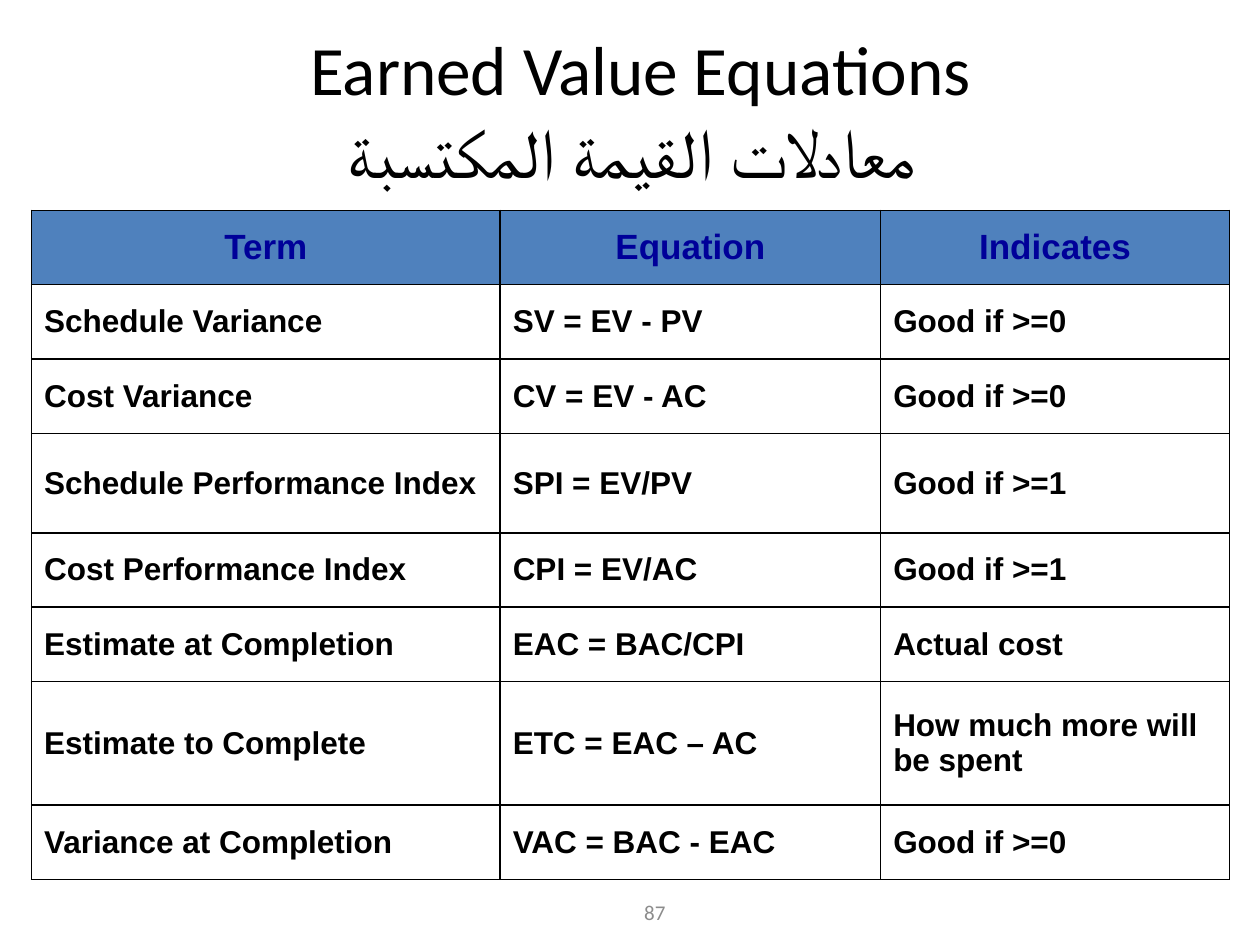
from dataclasses import dataclass

from lxml.etree import SubElement
from pptx import Presentation
from pptx.dml.color import RGBColor
from pptx.enum.text import MSO_ANCHOR, PP_ALIGN
from pptx.oxml.ns import qn
from pptx.util import Inches, Pt


@dataclass(frozen=True)
class Theme:
    ink: str = "000000"
    header_ink: str = "000099"
    header_fill: str = "4F81BD"
    muted: str = "8C8C8C"
    heading_font: str = "Calibri"
    table_font: str = "Arial"
    title_size: float = 39.6
    header_size: int = 20
    body_size: int = 18
    number_size: int = 12
    border_width: int = 1


THEME = Theme()
TITLE_LINES = ["Earned Value Equations", "معادلات القيمة المكتسبة "]
COLUMN_WIDTHS = [3.72, 3.02, 2.77]
ROW_HEIGHTS = [0.59, 0.59, 0.59, 0.79, 0.59, 0.59, 0.98, 0.59]
HEADINGS = ["Term", "Equation", "Indicates"]
EQUATIONS = [
    ["Schedule Variance", "SV = EV - PV", "Good if >=0"],
    ["Cost Variance", "CV = EV - AC", "Good if >=0"],
    ["Schedule Performance Index", "SPI = EV/PV", "Good if >=1"],
    ["Cost Performance Index", "CPI = EV/AC", "Good if >=1"],
    ["Estimate at Completion", "EAC = BAC/CPI", "Actual cost"],
    ["Estimate to Complete", "ETC = EAC – AC", ["How much more will", "be spent"]],
    ["Variance at Completion", "VAC = BAC - EAC", "Good if >=0"],
]


def add_span(para, text, color, **font_values):
    span = para.add_run()
    span.text = text
    for name, value in font_values.items():
        setattr(span.font, name, value)
    span.font.color.rgb = RGBColor.from_string(color)


def add_text_frame(page, box):
    frame = page.shapes.add_textbox(*map(Inches, box)).text_frame
    for name, value in {"word_wrap": True, "vertical_anchor": MSO_ANCHOR.MIDDLE}.items():
        setattr(frame, name, value)
    return frame


def add_title(page, box):
    para = add_text_frame(page, box).paragraphs[0]
    para.alignment = PP_ALIGN.CENTER
    for index, line in enumerate(TITLE_LINES):
        if index:
            para.add_line_break()
        add_span(para, line, THEME.ink, name=THEME.heading_font, size=Pt(THEME.title_size))


def add_page_number(page, box, number):
    para = add_text_frame(page, box).paragraphs[0]
    para.alignment = PP_ALIGN.RIGHT
    add_span(para, number, THEME.muted, name=THEME.heading_font, size=Pt(THEME.number_size))


def draw_borders(cell):
    properties = cell._tc.get_or_add_tcPr()
    # Border lines come before the fill in the cell properties
    for position, side in enumerate(("a:lnL", "a:lnR", "a:lnT", "a:lnB")):
        line = SubElement(properties, qn(side), w=str(Pt(THEME.border_width)))
        SubElement(SubElement(line, qn("a:solidFill")), qn("a:srgbClr"), val=THEME.ink)
        properties.insert(position, line)


def fill_cell(cell, content, is_header):
    cell.vertical_anchor = MSO_ANCHOR.MIDDLE
    if is_header:
        cell.fill.solid()
        cell.fill.fore_color.rgb = RGBColor.from_string(THEME.header_fill)
    else:
        cell.fill.background()
    draw_borders(cell)

    color = THEME.header_ink if is_header else THEME.ink
    size = THEME.header_size if is_header else THEME.body_size
    lines = content if isinstance(content, list) else [content]
    frame = cell.text_frame
    for index, line in enumerate(lines):
        para = frame.add_paragraph() if index else frame.paragraphs[0]
        para.alignment = PP_ALIGN.CENTER if is_header else PP_ALIGN.LEFT
        add_span(para, line, color, name=THEME.table_font, size=Pt(size), bold=True)


def add_equation_table(page, box):
    rows = [HEADINGS, *EQUATIONS]
    table = page.shapes.add_table(len(rows), len(HEADINGS), *map(Inches, box)).table
    table.horz_banding = False
    for column, width in zip(table.columns, COLUMN_WIDTHS):
        column.width = Inches(width)
    for row, height in zip(table.rows, ROW_HEIGHTS):
        row.height = Inches(height)
    for row_index, contents in enumerate(rows):
        for column_index, content in enumerate(contents):
            fill_cell(table.cell(row_index, column_index), content, row_index == 0)


def main():
    deck = Presentation()
    deck.slide_width, deck.slide_height = Inches(10), Inches(7.5)
    page = deck.slides.add_slide(deck.slide_layouts[6])

    # Page number, title and table, from back to front
    add_page_number(page, (3.65, 6.98, 1.73, 0.52), "87")
    add_title(page, (0.67, 0.33, 8.83, 1.08))
    add_equation_table(page, (0.25, 1.67, sum(COLUMN_WIDTHS), sum(ROW_HEIGHTS)))
    deck.save("out.pptx")


if __name__ == "__main__":
    main()
